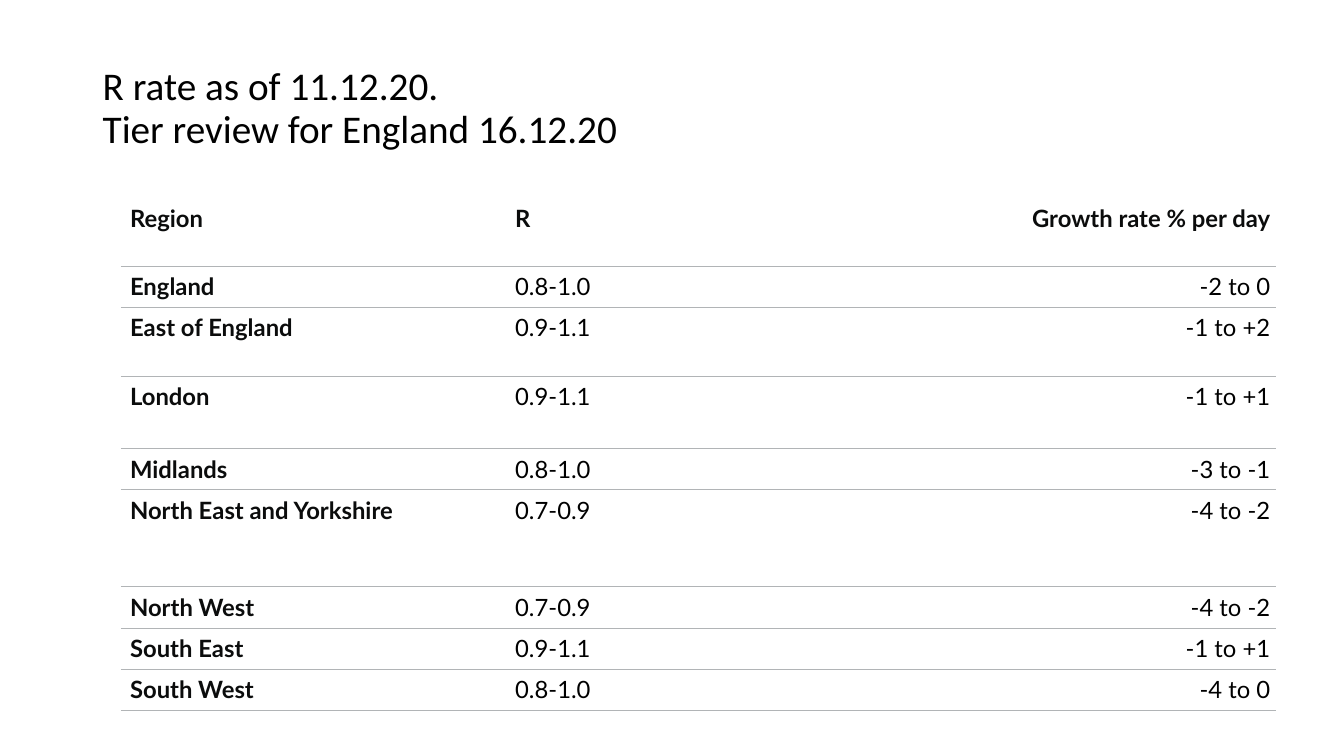
from lxml import etree
from pptx import Presentation
from pptx.dml.color import RGBColor
from pptx.enum import text
from pptx.oxml import ns
from pptx.util import Inches, Pt

COLORS = {"title": "000000", "label": "0B0C0C", "value": "000000",
          "rule": "B1B4B6", "cell": "FFFFFF"}
COLUMN_WIDTH = 3.82
ROWS = [
    (0.68, "Region", "R", "Growth rate % per day"),
    (0.41, "England", "0.8-1.0", "-2 to 0"),
    (0.68, "East of England", "0.9-1.1", "-1 to +2"),
    (0.72, "London", "0.9-1.1", "-1 to +1"),
    (0.41, "Midlands", "0.8-1.0", "-3 to -1"),
    (0.96, "North East and Yorkshire", "0.7-0.9", "-4 to -2"),
    (0.41, "North West", "0.7-0.9", "-4 to -2"),
    (0.41, "South East", "0.9-1.1", "-1 to +1"),
    (0.41, "South West", "0.8-1.0", "-4 to 0"),
]


def add_span(para, words, font, size, color, bold=False):
    span = para.add_run()
    span.text = words
    span.font.name = font
    span.font.size = Pt(size)
    span.font.bold = bold
    span.font.color.rgb = RGBColor.from_string(COLORS[color])


def set_borders(cell, ruled_sides):
    """Draw thin rules on the given sides (L, R, T, B) and clear the others."""
    properties = cell._tc.get_or_add_tcPr()
    for side in "LRTB":
        line = etree.SubElement(properties, ns.qn(f"a:ln{side}"))
        if side in ruled_sides:
            line.set("w", str(Pt(0.5)))
            fill = etree.SubElement(line, ns.qn("a:solidFill"))
            etree.SubElement(fill, ns.qn("a:srgbClr"), val=COLORS["rule"])
        else:
            line.set("w", "0")
            etree.SubElement(line, ns.qn("a:noFill"))


deck = Presentation()
deck.slide_width = Inches(13.33)
deck.slide_height = Inches(7.5)
page = deck.slides.add_slide(deck.slide_layouts[6])

# Title
box = page.shapes.add_textbox(Inches(0.92), Inches(0.4), Inches(7.11), Inches(1.37))
box.text_frame.word_wrap = True
box.text_frame.vertical_anchor = text.MSO_ANCHOR.MIDDLE
para = box.text_frame.paragraphs[0]
para.line_spacing = 0.9
add_span(para, "R rate as of 11.12.20.", "Calibri", 28, "title")
para.add_line_break()
add_span(para, "Tier review for England 16.12.20", "Calibri", 28, "title")

# Regional rates
table = page.shapes.add_table(
    len(ROWS), 3, Inches(1.2), Inches(1.96),
    Inches(3 * COLUMN_WIDTH), Inches(sum(row[0] for row in ROWS))).table
table.first_row = False
table.horz_banding = False
for column in table.columns:
    column.width = Inches(COLUMN_WIDTH)

for row_index, (height, *entries) in enumerate(ROWS):
    table.rows[row_index].height = Inches(height)
    is_header = row_index == 0
    for column_index, entry in enumerate(entries):
        cell = table.cell(row_index, column_index)
        set_borders(cell, "B" if is_header else "TB")
        cell.fill.solid()
        cell.fill.fore_color.rgb = RGBColor.from_string(COLORS["cell"])
        cell.margin_left = Inches(0.09)
        cell.margin_right = cell.margin_top = cell.margin_bottom = Inches(0.06)
        para = cell.text_frame.paragraphs[0]
        if column_index == 2:
            para.alignment = text.PP_ALIGN.RIGHT
        is_label = is_header or column_index == 0
        add_span(para, entry, "Lato", 17, "label" if is_label else "value", is_label)

deck.save("out.pptx")
